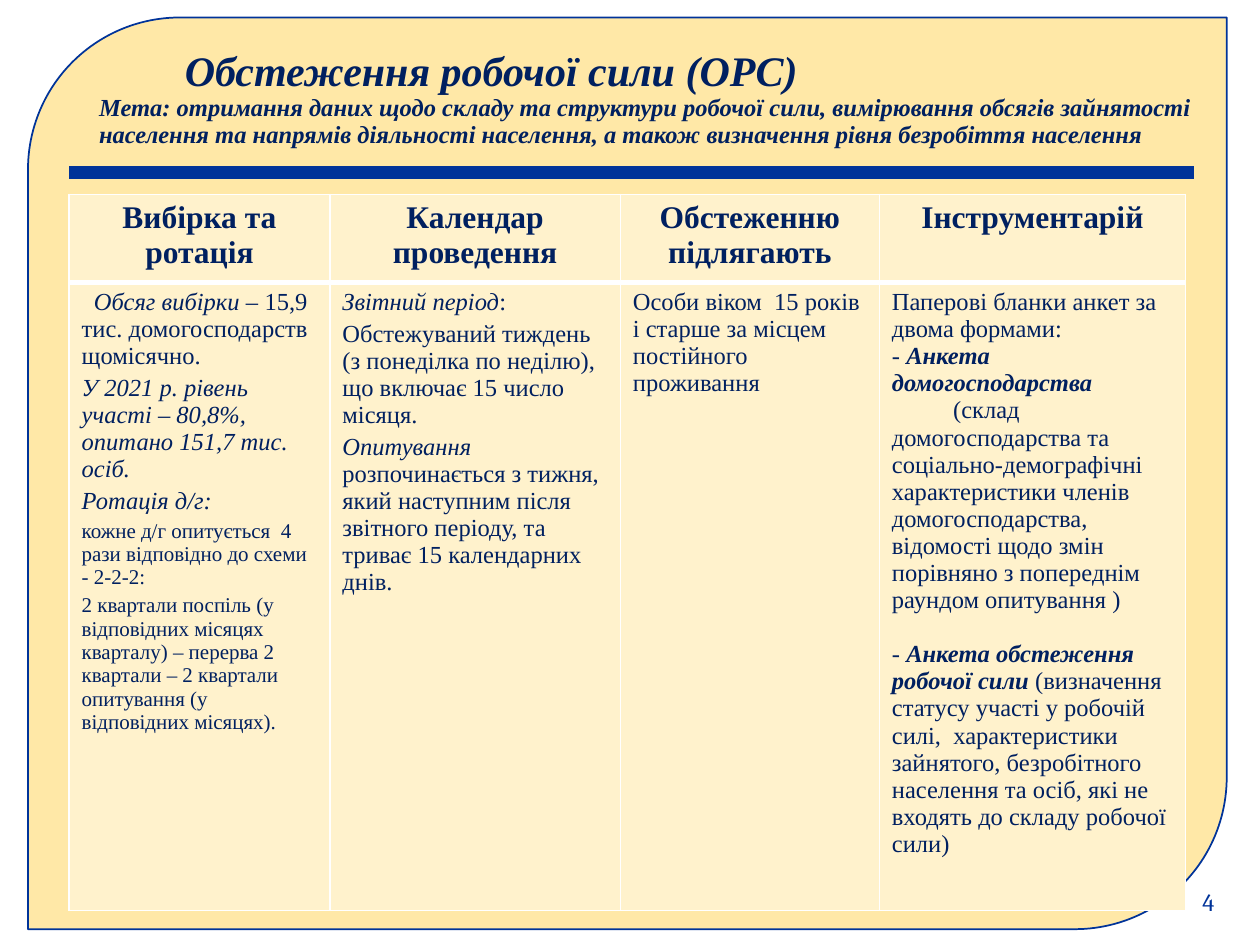
from dataclasses import dataclass

from lxml.etree import SubElement
from pptx import Presentation
from pptx.dml.color import RGBColor
from pptx.enum.shapes import MSO_CONNECTOR as CONN, MSO_SHAPE as SHAPE
from pptx.enum.text import MSO_ANCHOR as ANCHOR, PP_ALIGN as ALIGN
from pptx.oxml.ns import qn
from pptx.util import Pt


@dataclass(frozen=True)
class Theme:
    panel: str = "FFE8A7"
    cell: str = "FFF2CC"
    blue: str = "003399"
    navy: str = "002060"
    border: str = "FFFFFF"
    font: str = "Times New Roman"
    number_font: str = "Cambria"
    title: int = 24
    heading: int = 18
    body: int = 14
    small: int = 12


T = Theme()
ITALIC = {"italic": True}
STRONG = {"bold": True, "italic": True}
SMALL = {"size": T.small}
GAP = 2.7  # space between paragraphs
BLANK = 15.5  # one line of body text

HEADINGS = ["Вибірка та ротація", "Календар проведення",
            "Обстеженню підлягають", "Інструментарій"]
# Each column is a list of paragraphs: (runs, space before, first-line indent)
COLUMNS = [
    [
        ([("Обсяг вибірки – ", ITALIC),
          ("15,9 тис. домогосподарств щомісячно.", {})], 0, 7),
        ([("У 2021 р. рівень участі – 80,8%, опитано 151,7 тис. осіб.", ITALIC)], GAP, 0),
        ([("Ротація д/г:", ITALIC)], GAP, 0),
        ([("кожне д/г опитується  4 рази відповідно до схеми - 2-2-2:", SMALL)], GAP, 0),
        ([("2 квартали поспіль (у відповідних місяцях кварталу) – перерва 2 квартали "
           "– 2 квартали опитування (у відповідних місяцях).", SMALL)], GAP, 0),
    ],
    [
        ([("Звітний період", ITALIC), (":", {})], 0, 0),
        ([("Обстежуваний тиждень (з понеділка по неділю), що включає 15 число місяця.",
           {})], GAP, 0),
        ([("Опитування ", ITALIC),
          ("розпочинається з тижня, який наступним після звітного періоду, "
           "та триває 15 календарних днів.", {})], GAP, 0),
    ],
    [
        ([("Особи віком  15 років і старше за місцем постійного проживання", {})], 0, 0),
    ],
    [
        ([("Паперові бланки анкет за двома формами:", {})], 0, 0),
        ([("- ", {}), ("Анкета домогосподарства", STRONG)], 0, 0),
        ([("(склад домогосподарства та соціально-демографічні характеристики членів "
           "домогосподарства, відомості щодо змін порівняно з попереднім раундом "
           "опитування )", {})], 0, 35),
        ([("- ", {}), ("Анкета обстеження робочої сили ", STRONG),
          ("(визначення статусу участі у робочій силі,  характеристики зайнятого, "
           "безробітного населення та осіб, які не входять до складу робочої сили)",
           {})], BLANK, 0),
    ],
]


def rgb(color):
    return RGBColor.from_string(color)


def add_run(p, text, size=T.body, color=T.navy, font=T.font, bold=False, italic=False):
    r = p.add_run()
    r.text = text
    f = r.font
    f.size, f.name, f.bold, f.italic = Pt(size), font, bold, italic
    f.color.rgb = rgb(color)


def set_indent(p, indent):
    """Indent the first line of a paragraph only."""
    pPr = p._p.get_or_add_pPr()
    pPr.set("marL", "0")
    pPr.set("indent", str(Pt(indent)))


def add_box(s, x, y, w, h):
    tf = s.shapes.add_textbox(Pt(x), Pt(y), Pt(w), Pt(h)).text_frame
    tf.word_wrap = True
    tf.vertical_anchor = ANCHOR.MIDDLE
    return tf


def add_panel(s, x, y, w, h):
    sp = s.shapes.add_shape(SHAPE.ROUND_2_DIAG_RECTANGLE, Pt(x), Pt(y), Pt(w), Pt(h))
    sp.shadow.inherit = False
    sp.fill.solid()
    sp.fill.fore_color.rgb = rgb(T.panel)
    sp.line.color.rgb = rgb(T.blue)
    sp.line.width = Pt(1)


def add_title(s, x, y, w, h):
    p = add_box(s, x, y, w, h).paragraphs[0]
    set_indent(p, 49)
    p.line_spacing = 0.9
    add_run(p, "Обстеження робочої сили (ОРС)", size=T.title, **STRONG)
    p.add_line_break()
    add_run(p, "Мета: отримання даних щодо складу та структури робочої сили, "
               "вимірювання обсягів зайнятості населення та напрямів діяльності "
               "населення, а також визначення рівня безробіття населення", **STRONG)


def add_rule(s, x, y, w):
    line = s.shapes.add_connector(CONN.STRAIGHT, Pt(x), Pt(y), Pt(x + w), Pt(y))
    line.line.color.rgb = rgb(T.blue)
    line.line.width = Pt(7.75)
    SubElement(line._element.spPr, qn("a:effectLst"))


def style_cell(cell, top, bottom):
    """Set the borders and then the fill, in the order the schema asks for."""
    tcPr = cell._tc.get_or_add_tcPr()
    for side, width in (("L", 1), ("R", 1), ("T", top), ("B", bottom)):
        ln = SubElement(tcPr, qn(f"a:ln{side}"), w=str(Pt(width)))
        fill = SubElement(ln, qn("a:solidFill"))
        SubElement(fill, qn("a:srgbClr"), val=T.border)
    cell.fill.solid()
    cell.fill.fore_color.rgb = rgb(T.cell)


def fill_cell(cell, paragraphs):
    tf = cell.text_frame
    for i, (runs, before, indent) in enumerate(paragraphs):
        p = tf.add_paragraph() if i else tf.paragraphs[0]
        if indent:
            set_indent(p, indent)
        if before:
            p.space_before = Pt(before)
        for text, fmt in runs:
            add_run(p, text, **fmt)


def add_survey_table(s, x, y, widths, heights):
    frame = s.shapes.add_table(2, len(widths), Pt(x), Pt(y),
                               Pt(sum(widths)), Pt(sum(heights)))
    table = frame.table
    table.first_row = table.horz_banding = False
    for row, height in zip(table.rows, heights):
        row.height = Pt(height)
    for i, (width, heading, body) in enumerate(zip(widths, HEADINGS, COLUMNS)):
        table.columns[i].width = Pt(width)
        head, cell = table.cell(0, i), table.cell(1, i)
        style_cell(head, top=1, bottom=3)
        style_cell(cell, top=3, bottom=1)
        fill_cell(head, [([(heading, {"size": T.heading, "bold": True})], 0, 0)])
        head.text_frame.paragraphs[0].alignment = ALIGN.CENTER
        fill_cell(cell, body)


def add_page_number(s, x, y, w, h):
    p = add_box(s, x, y, w, h).paragraphs[0]
    p.alignment = ALIGN.RIGHT
    add_run(p, "4", color=T.blue, font=T.number_font)


def main():
    prs = Presentation()
    prs.slide_width, prs.slide_height = Pt(720), Pt(540)
    s = prs.slides.add_slide(prs.slide_layouts[6])
    add_panel(s, 16, 10, 685, 521)
    add_title(s, 49.5, 18, 643.5, 77.5)
    add_rule(s, 39.5, 98.5, 643)
    add_survey_table(s, 39.5, 111, (149, 166, 148, 175), (50, 344))
    add_page_number(s, 664.5, 500.5, 36.5, 29)
    prs.save("out.pptx")


if __name__ == "__main__":
    main()
